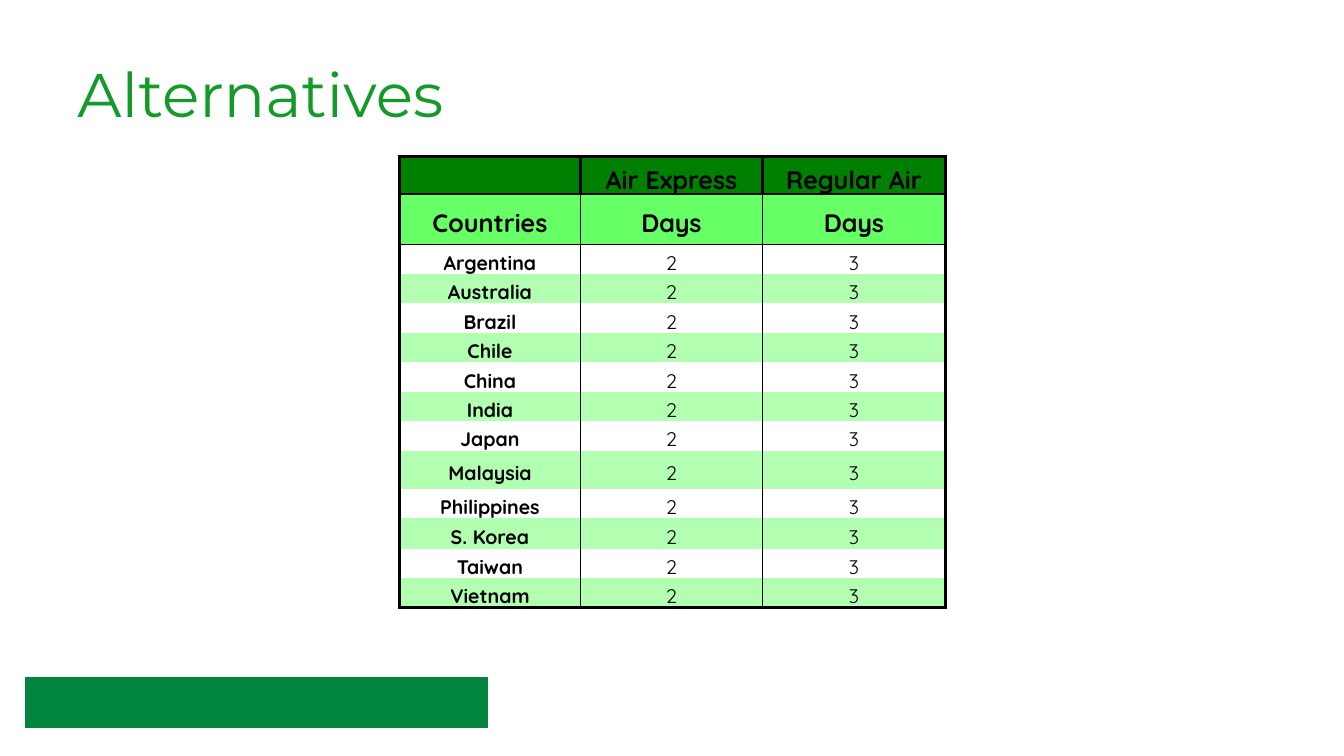
from lxml.etree import SubElement
from pptx import Presentation
from pptx.dml.color import RGBColor
from pptx.enum.shapes import MSO_SHAPE
from pptx.enum.text import MSO_ANCHOR, PP_ALIGN
from pptx.oxml.ns import qn
from pptx.util import Inches, Pt

# Content
TITLE = "Alternatives"
HEADS = [("", "Air Express", "Regular Air"), ("Countries", "Days", "Days")]
LANDS = ["Argentina", "Australia", "Brazil", "Chile", "China", "India",
         "Japan", "Malaysia", "Philippines", "S. Korea", "Taiwan", "Vietnam"]
ROWS = HEADS + [(land, "2", "3") for land in LANDS]

# Colours
BLACK = RGBColor(0x00, 0x00, 0x00)
WHITE = RGBColor(0xFF, 0xFF, 0xFF)
LEAF = RGBColor(0x13, 0x9A, 0x29)
DARK = RGBColor(0x00, 0x80, 0x00)
LIME = RGBColor(0x66, 0xFF, 0x66)
PALE = RGBColor(0xB2, 0xFF, 0xB2)
BAR = RGBColor(0x00, 0x85, 0x3E)

# Sizes
WIDTHS = [1.8, 1.8, 1.82]
HEIGHT = 0.27
TALL = {"Countries": 0.5, "Malaysia": 0.38, "S. Korea": 0.3}
THICK, THIN = 2.25, 1
LAST = len(ROWS)


def set_font(font, color, **look):
    for key, value in look.items():
        setattr(font, key, value)
    font.color.rgb = color


def row_fill(row):
    if row < len(HEADS):
        return (DARK, LIME)[row]
    return PALE if row % 2 else WHITE


def side_width(row, edge):
    return THICK if row == 0 or edge in (0, len(WIDTHS)) else THIN


def rule_width(edge):
    return {0: THICK, 1: THICK, 2: THIN, LAST: THICK}.get(edge, 0)


def add_line(cell, tag, width):
    line = SubElement(cell._tc.get_or_add_tcPr(), qn(f"a:{tag}"))
    line.set("w", str(int(Pt(width))))
    if width:
        fill = SubElement(line, qn("a:solidFill"))
        SubElement(fill, qn("a:srgbClr")).set("val", str(BLACK))
    else:
        SubElement(line, qn("a:noFill"))


def style_cell(cell, row, col, text):
    # Borders come before the fill in the cell's XML
    edges = {"lnL": side_width(row, col), "lnR": side_width(row, col + 1),
             "lnT": rule_width(row), "lnB": rule_width(row + 1)}
    for tag, width in edges.items():
        add_line(cell, tag, width)
    cell.fill.solid()
    cell.fill.fore_color.rgb = row_fill(row)
    look = {"margin_left": Inches(0.07), "margin_right": Inches(0.07),
            "margin_top": 0, "margin_bottom": 0,
            "vertical_anchor": MSO_ANCHOR.MIDDLE}
    for key, value in look.items():
        setattr(cell, key, value)
    cell.text = text
    para = cell.text_frame.paragraphs[0]
    para.alignment = PP_ALIGN.CENTER
    para.line_spacing = 1.25
    head = row < len(HEADS)
    set_font(para.font if not text else para.runs[0].font, BLACK,
             name="Quicksand", size=Pt(18 if head else 14),
             bold=head or col == 0)


deck = Presentation()
deck.slide_width, deck.slide_height = Inches(13.33), Inches(7.5)
slide = deck.slides.add_slide(deck.slide_layouts[6])

# Title
box = slide.shapes.add_textbox(Inches(0.67), Inches(0.3), Inches(12), Inches(1.25))
frame = box.text_frame
frame.word_wrap = True
frame.vertical_anchor = MSO_ANCHOR.MIDDLE
frame.text = TITLE
set_font(frame.paragraphs[0].runs[0].font, LEAF, name="Montserrat", size=Pt(44))

# Table of transit days
tall = [TALL.get(row[0], HEIGHT) for row in ROWS]
table = slide.shapes.add_table(
    LAST, len(WIDTHS), Inches(3.96), Inches(1.55),
    Inches(sum(WIDTHS)), Inches(sum(tall))).table
table.first_row = table.horz_banding = False
for col, width in enumerate(WIDTHS):
    table.columns[col].width = Inches(width)
for row, texts in enumerate(ROWS):
    table.rows[row].height = Inches(tall[row])
    for col, text in enumerate(texts):
        style_cell(table.cell(row, col), row, col, text)

# Footer bar
bar = slide.shapes.add_shape(
    MSO_SHAPE.RECTANGLE, Inches(0.25), Inches(6.72), Inches(4.59), Inches(0.5))
bar.shadow.inherit = False
bar.fill.solid()
bar.fill.fore_color.rgb = BAR
bar.line.color.rgb = BAR
bar.line.width = Pt(0.75)

deck.save("out.pptx")
